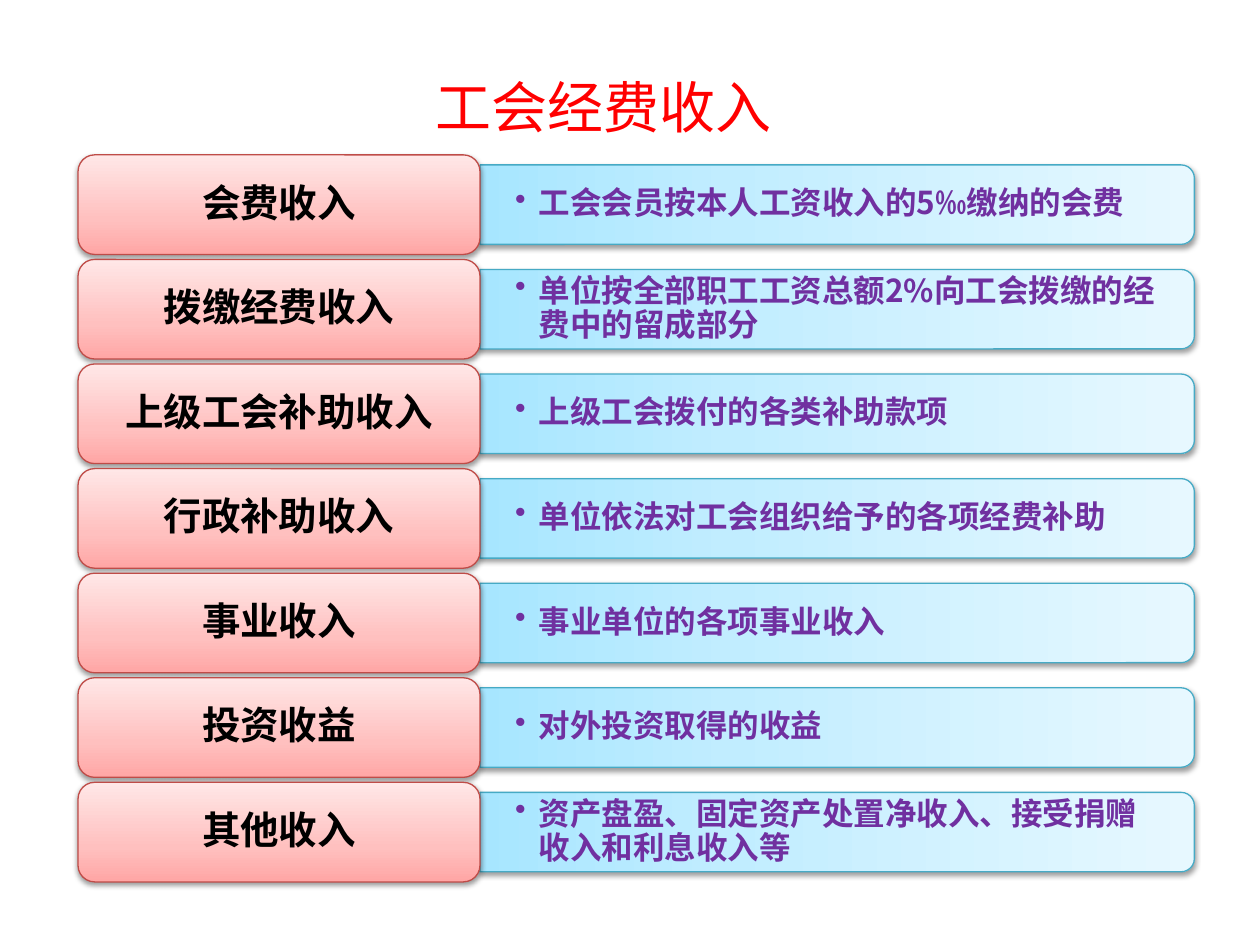
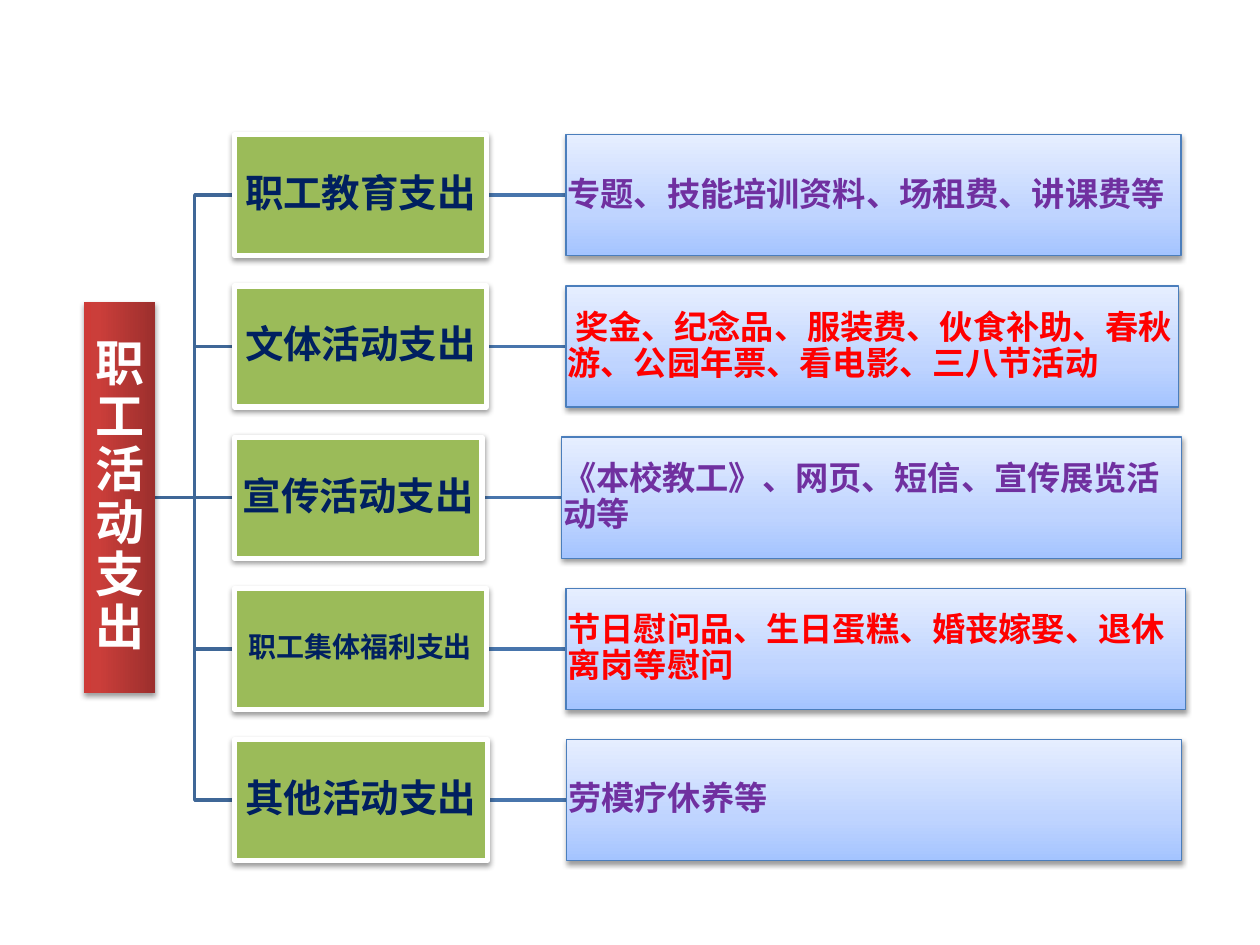
from lxml.etree import SubElement
from pptx import Presentation
from pptx.dml.color import RGBColor
from pptx.enum.shapes import MSO_CONNECTOR, MSO_SHAPE
from pptx.enum.text import MSO_ANCHOR, PP_ALIGN
from pptx.oxml.ns import qn
from pptx.util import Pt

HEX = {
    "red": "FF0000", "purple": "7030A0", "navy": "002060",
    "black": "000000", "white": "FFFFFF", "green": "9BBB59",
    "rose": "BF4C48", "teal": "46AAC5", "blue": "4B7EBC",
    "link": "4875AC", "branch": "3F6797",
}
FADES = {
    "pink": ((0, "FFA6A5"), (35, "FFC0BF"), (100, "FFE7E7")),
    "sky": ((0, "A7E6FF"), (35, "C1EDFF"), (100, "E7F8FF")),
    "ice": ((0, "A4C4FF"), (35, "BFD4FF"), (100, "E6EEFF")),
    "brick": ((0, "9C2F2D"), (80, "CB3E3A"), (100, "CE3B37")),
}
LATIN = "Calibri"
HAN = "Noto Sans CJK SC"

INCOME = [
    ("会费收入", "工会会员按本人工资收入的5‰缴纳的会费"),
    ("拨缴经费收入", "单位按全部职工工资总额2%向工会拨缴的经费中的留成部分"),
    ("上级工会补助收入", "上级工会拨付的各类补助款项"),
    ("行政补助收入", "单位依法对工会组织给予的各项经费补助"),
    ("事业收入", "事业单位的各项事业收入"),
    ("投资收益", "对外投资取得的收益"),
    ("其他收入", "资产盘盈、固定资产处置净收入、接受捐赠收入和利息收入等"),
]
COSTS = [
    ("职工教育支出", 22, 144, "专题、技能培训资料、场租费、讲课费等", 351.4, "purple"),
    ("文体活动支出", 22, 144, " 奖金、纪念品、服装费、伙食补助、春秋游、公园年票、看电影、三八节活动", 350, "red"),
    ("宣传活动支出", 22, 141.5, "《本校教工》、网页、短信、宣传展览活动等", 354.2, "purple"),
    ("职工集体福利支出", 16, 144, "节日慰问品、生日蛋糕、婚丧嫁娶、退休离岗等慰问", 354.2, "red"),
    ("其他活动支出", 22, 144.5, "劳模疗休养等", 351.4, "purple"),
]


def tint(name):
    return RGBColor.from_string(HEX[name])


def write(shape, text, size=22, color="black", font=LATIN, bold=True,
          align=PP_ALIGN.CENTER, inset=(1.4, 1.4), space=0.9, bullet=False):
    frame = shape.text_frame
    frame.word_wrap = True
    frame.vertical_anchor = MSO_ANCHOR.MIDDLE
    frame.margin_left = frame.margin_right = Pt(inset[0])
    frame.margin_top = frame.margin_bottom = Pt(inset[1])
    para = frame.paragraphs[0]
    para.alignment = align
    para.line_spacing = space
    run = para.add_run()
    run.text = text
    run.font.size = Pt(size)
    run.font.bold = bold
    run.font.name = font
    run.font.color.rgb = tint(color)
    SubElement(run.font._element, qn("a:ea"), typeface=LATIN)
    if bullet:
        props = para._p.get_or_add_pPr()
        props.set("marL", str(Pt(13.5)))
        props.set("indent", str(Pt(-13.5)))
        SubElement(props, qn("a:buChar"), char="•")


def fade(props, name, angle):
    grad = SubElement(props, qn("a:gradFill"), rotWithShape="1")
    stops = SubElement(grad, qn("a:gsLst"))
    for pos, color in FADES[name]:
        stop = SubElement(stops, qn("a:gs"), pos=str(pos * 1000))
        SubElement(stop, qn("a:srgbClr"), val=color)
    SubElement(grad, qn("a:lin"), ang=str(angle * 60000), scaled="0")


def shade(props):
    effects = SubElement(props, qn("a:effectLst"))
    outer = SubElement(effects, qn("a:outerShdw"), blurRad=str(Pt(3.1)),
                       dist=str(Pt(1.6)), dir="5400000", rotWithShape="0")
    color = SubElement(outer, qn("a:srgbClr"), val=HEX["black"])
    SubElement(color, qn("a:alpha"), val="38000")


def block(slide, kind, left, top, width, height, fill, line=None, thick=0.75,
          angle=270):
    shape = slide.shapes.add_shape(kind, Pt(left), Pt(top), Pt(width), Pt(height))
    props = shape._element.spPr
    if fill in FADES:
        fade(props, fill, angle)
    else:
        shape.fill.solid()
        shape.fill.fore_color.rgb = tint(fill)
    if line:
        shape.line.color.rgb = tint(line)
        shape.line.width = Pt(thick)
    else:
        shape.line.fill.background()
    shade(props)
    return shape


def join(slide, start, end, color, kind=MSO_CONNECTOR.STRAIGHT):
    line = slide.shapes.add_connector(kind, 0, 0, 0, 0)
    line.begin_connect(start, 3)
    line.end_connect(end, 1)
    line.line.color.rgb = tint(color)
    line.line.width = Pt(2)
    SubElement(line._element.spPr, qn("a:effectLst"))
    slide.shapes[0]._element.addprevious(line._element)


def income(deck):
    slide = deck.slides.add_slide(deck.slide_layouts[5])
    title = slide.shapes.title
    title.left, title.top = Pt(198.7), Pt(37.5)
    title.width, title.height = Pt(300.2), Pt(46)
    write(title, "工会经费收入 ", size=32, color="red", font=HAN, bold=False,
          inset=(7.2, 3.6), space=1.0)
    left, width, height, pitch = 44.6, 229.7, 56.9, 59.76
    long, thin = 408.2, 45.4
    for row, (name, detail) in enumerate(INCOME):
        top = 88.5 + row * pitch
        mid = top + height / 2
        edge = left + width
        bar = block(slide, MSO_SHAPE.ROUND_2_SAME_RECTANGLE,
                    edge + (long - thin) / 2, mid - long / 2, thin, long,
                    "sky", "teal")
        bar.rotation = 90
        note = slide.shapes.add_textbox(Pt(edge + 0.7), Pt(mid - 20.5),
                                        Pt(406), Pt(41))
        write(note, detail, size=18, color="purple", font=HAN,
              align=PP_ALIGN.LEFT, inset=(19.4, 10), bullet=True)
        label = block(slide, MSO_SHAPE.ROUNDED_RECTANGLE, left, top, width,
                      height, "pink", "rose")
        write(label, name, inset=(9.4, 6.5))


def costs(deck):
    slide = deck.slides.add_slide(deck.slide_layouts[6])
    rect = MSO_SHAPE.RECTANGLE
    stem = block(slide, rect, 48.2, 172.8, 40.3, 223.2, "brick", angle=180)
    write(stem, "职工活动支出", size=28, color="white")
    left, height, pitch, gap = 134, 69.2, 86.4, 45.4
    for row, (name, size, width, detail, span, color) in enumerate(COSTS):
        top = 284.4 + (row - 2) * pitch - height / 2
        box = block(slide, rect, left, top, width, height, "green", "white", 3)
        write(box, name, size=size, color="navy")
        note = block(slide, rect, left + width + gap, top, span, height,
                     "ice", "blue")
        write(note, detail, size=19, color=color, font=HAN,
              align=PP_ALIGN.LEFT, inset=(0.9, 0.9))
        kind = MSO_CONNECTOR.STRAIGHT if row == 2 else MSO_CONNECTOR.ELBOW
        join(slide, stem, box, "branch", kind)
        join(slide, box, note, "link")


def main():
    deck = Presentation()
    deck.slide_width, deck.slide_height = Pt(720), Pt(540)
    income(deck)
    costs(deck)
    deck.save("out.pptx")


if __name__ == "__main__":
    main()
